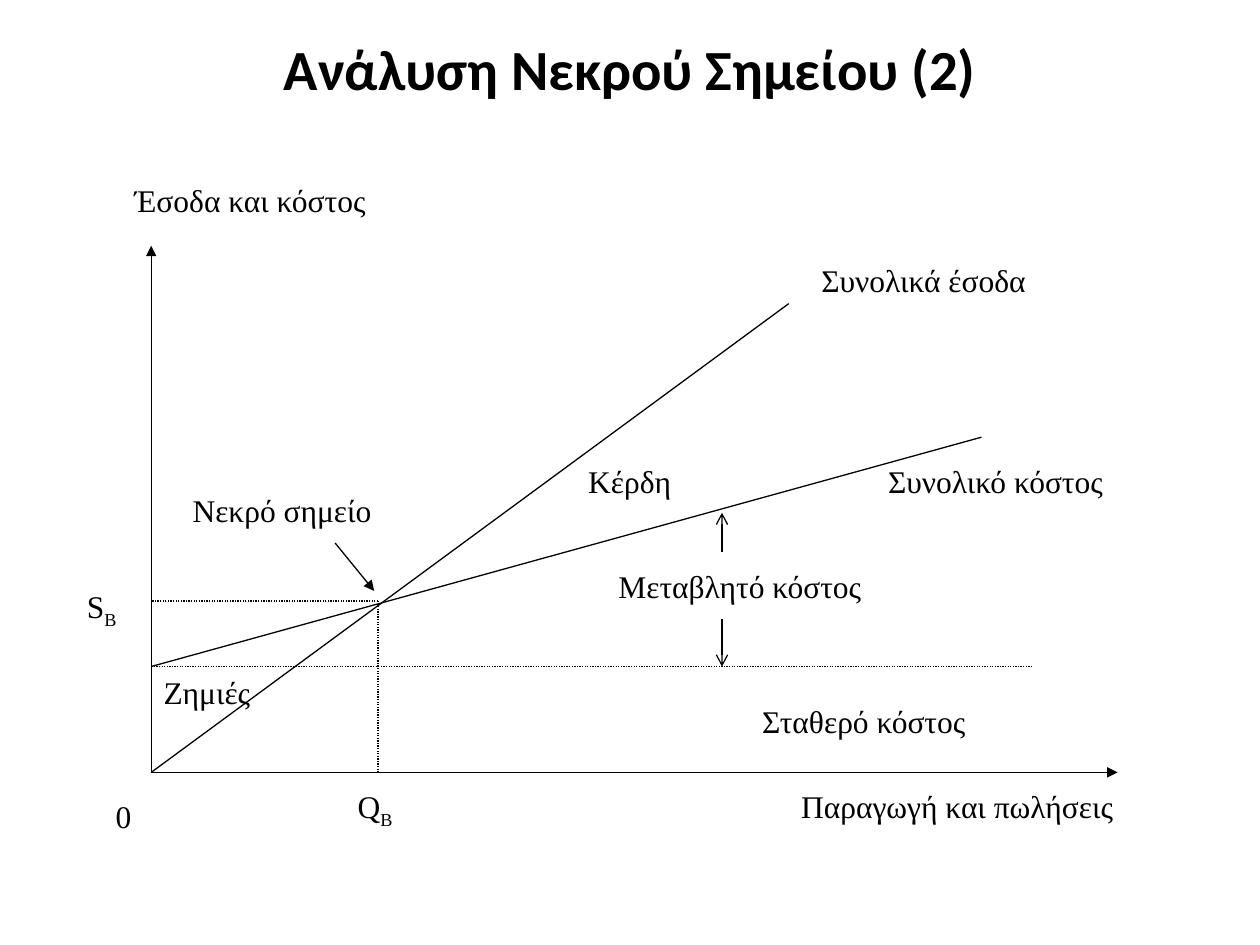
from pptx import Presentation
from pptx import util as u
from pptx.dml.color import RGBColor
from pptx.enum import dml, shapes, text
from pptx.oxml.ns import qn
from lxml import etree

BLACK = "000000"


def paint(fill, colour):
    fill.solid()
    fill.fore_color.rgb = RGBColor.from_string(colour)


def add_line(page, start, end, dash=None, head=None, tail=None):
    line = page.shapes.add_connector(
        shapes.MSO_CONNECTOR.STRAIGHT, *(u.Inches(v) for v in start + end))
    paint(line.line.fill, BLACK)
    line.line.width = u.Pt(0.75)
    if dash:
        line.line.dash_style = dash
    properties = line._element.spPr
    outline = properties.find(qn("a:ln"))
    for tag, kind in (("a:headEnd", head), ("a:tailEnd", tail)):
        if kind:
            etree.SubElement(outline, qn(tag), type=kind)
    etree.SubElement(properties, qn("a:effectLst"))


deck = Presentation()
deck.slide_width, deck.slide_height = u.Inches(10), u.Inches(7.5)
page = deck.slides.add_slide(deck.slide_layouts[5])

# Title
title = page.shapes.title
place = {"left": 0, "top": 0.22, "width": 10, "height": 0.54}
for name, value in place.items():
    setattr(title, name, u.Inches(value))
frame = title.text_frame
frame.text = "Ανάλυση Νεκρού Σημείου (2)"
frame.word_wrap = True
frame.auto_size = text.MSO_AUTO_SIZE.NONE
frame.vertical_anchor = text.MSO_ANCHOR.TOP
para = frame.paragraphs[0]
para.alignment = text.PP_ALIGN.CENTER
for name, value in {"name": "Calibri", "size": u.Pt(32.4), "bold": True}.items():
    setattr(para.runs[0].font, name, value)
paint(para.runs[0].font.fill, BLACK)

# Key points of the diagram
axis_x, axis_y = 1.2, 6.13
fixed_y = 5.29
even_x, even_y = 3, 4.77
variable_x = 5.73
origin = (axis_x, axis_y)
dotted = dml.MSO_LINE.ROUND_DOT

# Axes
add_line(page, (axis_x, 1.95), origin, head="triangle")
add_line(page, origin, (8.87, axis_y), tail="triangle")

# Total revenue and total cost
add_line(page, origin, (6.26, 2.41))
add_line(page, (axis_x, fixed_y), (7.79, 3.47))

# Break-even guides and fixed cost
for start, end in (
    ((even_x, even_y), (axis_x, even_y)),
    ((even_x, even_y), (even_x, axis_y)),
    ((axis_x, fixed_y), (8.2, fixed_y)),
):
    add_line(page, start, end, dash=dotted)

# Pointer to the break-even point, and variable cost span
add_line(page, (2.66, 4.31), (2.97, 4.69), tail="triangle")
add_line(page, (variable_x, 4.07), (variable_x, 4.38), head="arrow")
add_line(page, (variable_x, 4.91), (variable_x, fixed_y), tail="arrow")

# Labels: text, subscript, left, top, width
labels = [
    ("Έσοδα και κόστος", "", 0.97, 1.39, 2.21),
    ("Συνολικά έσοδα", "", 6.42, 2.02, 2.22),
    ("Συνολικό κόστος", "", 6.95, 3.62, 2.22),
    ("Κέρδη", "", 4.57, 3.62, 1.07),
    ("Νεκρό σημείο", "", 1.43, 3.85, 2.22),
    ("Μεταβλητό κόστος", "", 4.81, 4.45, 2.22),
    ("S", "B", 0.59, 4.61, 0.61),
    ("Ζημιές", "", 1.2, 5.29, 1.07),
    ("Σταθερό κόστος", "", 5.95, 5.52, 2.22),
    ("Q", "B", 2.74, 6.2, 0.69),
    ("0", "", 0.82, 6.28, 0.69),
    ("Παραγωγή και πωλήσεις", "", 6.26, 6.2, 2.91),
]
for words, subscript, left, top, width in labels:
    box = page.shapes.add_textbox(*(u.Inches(v) for v in (left, top, width, 0.3)))
    box.text_frame.word_wrap = True
    para = box.text_frame.paragraphs[0]
    for part in filter(None, (words, subscript)):
        span = para.add_run()
        span.text = part
        for name, value in {"name": "Times New Roman", "size": u.Pt(18)}.items():
            setattr(span.font, name, value)
        paint(span.font.fill, BLACK)
    if subscript:
        span._r.get_or_add_rPr().set("baseline", "-25000")

deck.save("out.pptx")
